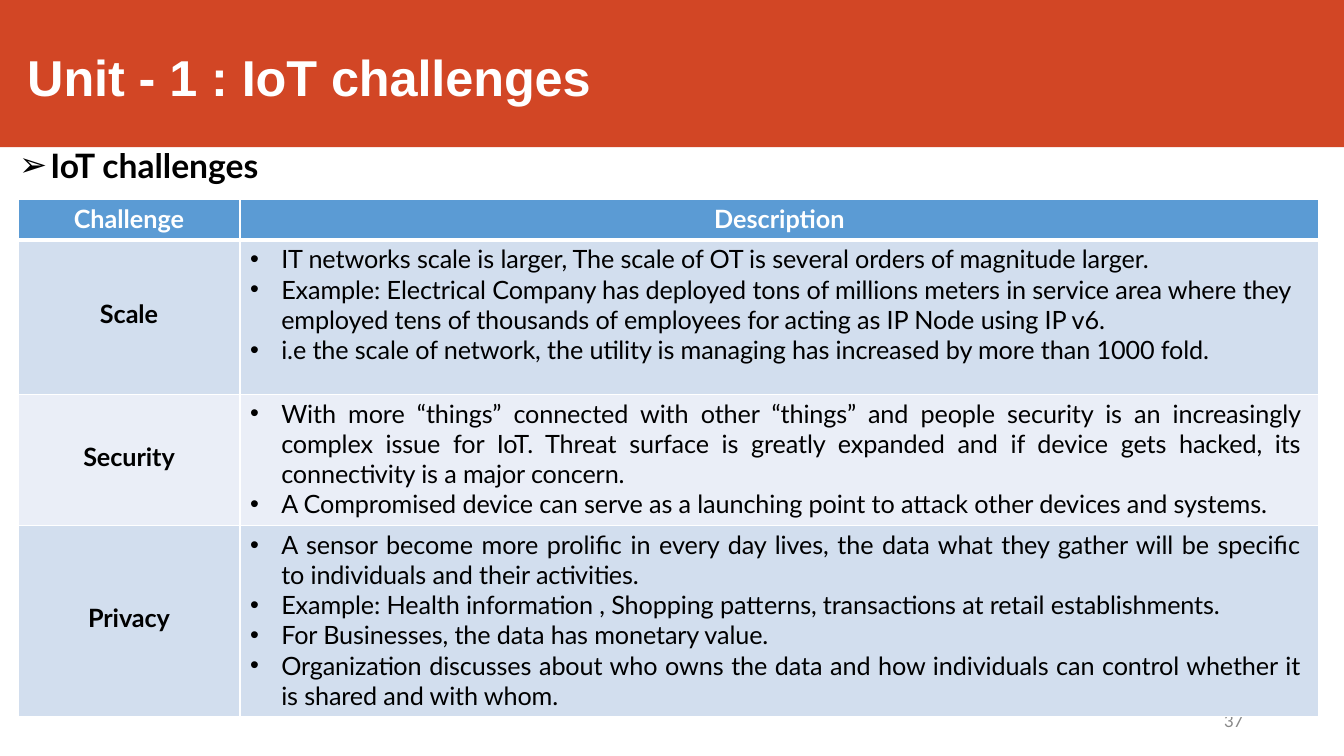
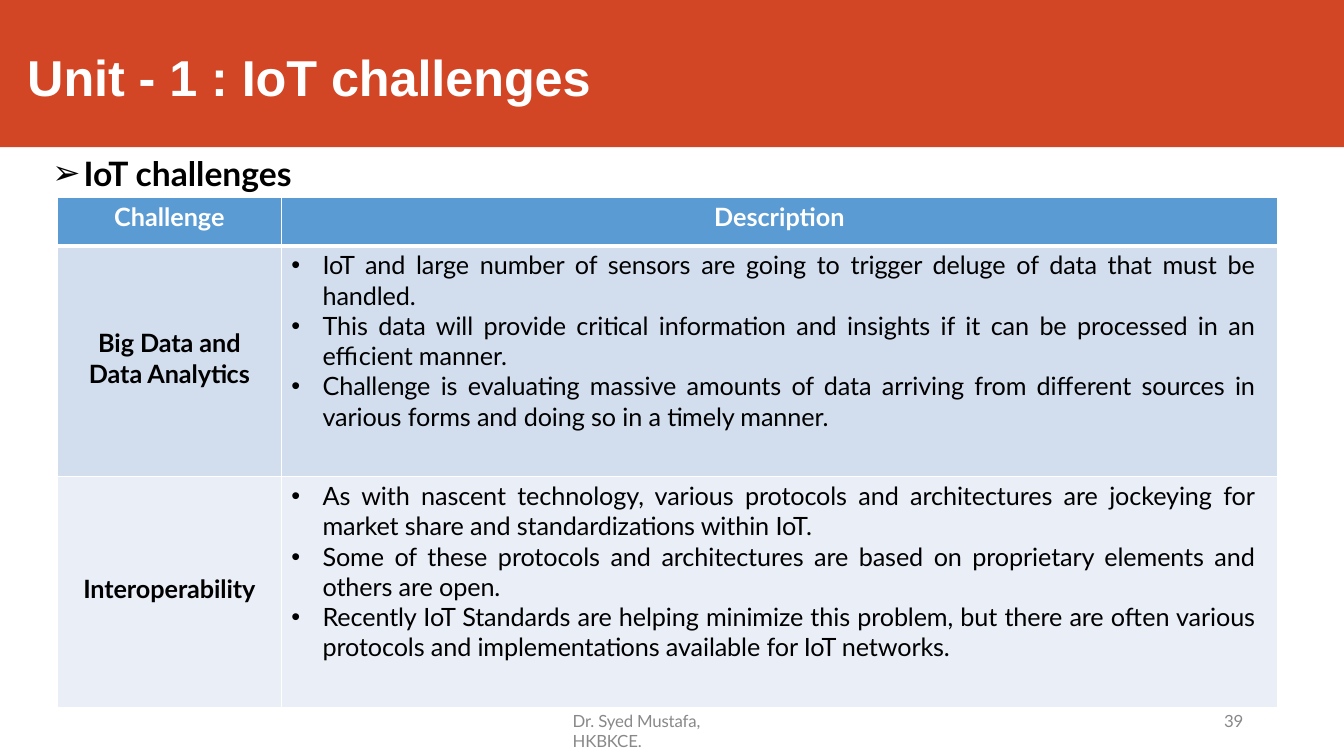
"""Build two slides that list IoT challenges in tables."""
from lxml import etree
from pptx import Presentation
from pptx.dml.color import RGBColor
from pptx.enum.shapes import MSO_SHAPE
from pptx.enum.text import MSO_ANCHOR, MSO_AUTO_SIZE, PP_ALIGN
from pptx.oxml.ns import qn
from pptx.util import Inches, Pt

LEFT, CENTER, JUSTIFY = PP_ALIGN.LEFT, PP_ALIGN.CENTER, PP_ALIGN.JUSTIFY
TOP, MIDDLE = MSO_ANCHOR.TOP, MSO_ANCHOR.MIDDLE
NO_FIT, RECTANGLE = MSO_AUTO_SIZE.NONE, MSO_SHAPE.RECTANGLE

WIDTH, HEIGHT, BAND_HEIGHT = 13.33, 7.5, 1.46
RED, BLUE, WHITE, BLACK, GRAY = "D24625", "5B9BD4", "FFFFFF", "000000", "888888"
ROW_FILLS = ("D2DEEE", "EAEEF7")
HEADING_FONT, BODY_FONT = "Arial", "Lato"
TITLE = "Unit - 1 : IoT challenges"
SUBTITLE = "IoT challenges"
HEADER = ("Challenge", "Description")

SLIDES = [
    {
        "number": "37", "footer": None, "subtitle_at": (0.17, 1.43),
        "table_at": (0.18, 1.98), "columns": (2.2, 10.7),
        "heights": (0.4, 1.53, 1.3, 1.9), "right_margin": 0.18,
        "rows": [
            ("Scale", LEFT, [
                "IT networks scale is larger, The scale of OT is several orders of magnitude larger.",
                "Example: Electrical Company has deployed tons of millions meters in service area "
                "where they\vemployed tens of thousands of employees for acting as IP Node using IP v6.",
                "i.e the scale of network, the utility is managing has increased by more than 1000 fold.",
            ]),
            ("Security", JUSTIFY, [
                "With more “things” connected with other “things” and people security is an "
                "increasingly complex issue for IoT. Threat surface is greatly expanded and if "
                "device gets hacked, its connectivity is a major concern.",
                "A Compromised device can serve as a launching point to attack other devices and systems.",
            ]),
            ("Privacy", JUSTIFY, [
                "A sensor become more prolific in every day lives, the data what they gather "
                "will be specific\vto individuals and their activities.",
                "Example: Health information , Shopping patterns, transactions at retail establishments.",
                "For Businesses, the data has monetary value.",
                "Organization discusses about who owns the data and how individuals can control "
                "whether it\vis shared and with whom.",
            ]),
        ],
    },
    {
        "number": "39", "footer": "Dr. Syed Mustafa, HKBKCE.", "subtitle_at": (0.5, 1.51),
        "table_at": (0.57, 1.96), "columns": (2.22, 9.88),
        "heights": (0.48, 2.29, 2.29), "right_margin": 0.22,
        "rows": [
            ("Big Data and\vData Analytics", JUSTIFY, [
                "IoT and large number of sensors are going to trigger deluge of data that must be\vhandled.",
                "This data will provide critical information and insights if it can be processed "
                "in an\vefficient manner.",
                "Challenge is evaluating massive amounts of data arriving from different sources "
                "in\vvarious forms and doing so in a timely manner.",
            ]),
            ("Interoperability", JUSTIFY, [
                "As with nascent technology, various protocols and architectures are jockeying "
                "for\vmarket share and standardizations within IoT.",
                "Some of these protocols and architectures are based on proprietary elements "
                "and\vothers are open.",
                "Recently IoT Standards are helping minimize this problem, but there are often "
                "various\vprotocols and implementations available for IoT networks.",
            ]),
        ],
    },
]


def color(value):
    """Turn a hex string into a colour."""
    return RGBColor.from_string(value)


def write(para, text, size, ink, bold=False, font=BODY_FONT, spacing=0, align=LEFT, before=0):
    """Fill a paragraph with runs, breaking lines at vertical tabs."""
    para.alignment = align
    para.space_before = Pt(before)
    for index, line in enumerate(text.split("\v")):
        if index:
            para.add_line_break()
        span = para.add_run()
        span.text = line
        span.font.size, span.font.bold, span.font.name = Pt(size), bold, font
        span.font.color.rgb = color(ink)
        if spacing:
            span.font._element.set("spc", str(spacing))


def add_bullet(para, mark, indent, hang=0.31):
    """Give a paragraph a bullet with a hanging indent."""
    settings = para._p.get_or_add_pPr()
    settings.set("marL", str(Inches(indent)))
    settings.set("indent", str(-Inches(hang)))
    etree.SubElement(settings, qn("a:buFont")).set("typeface", HEADING_FONT)
    etree.SubElement(settings, qn("a:buChar")).set("char", mark)


def prepare(frame, top):
    """Set the shared insets and wrapping of a text frame."""
    frame.word_wrap, frame.auto_size, frame.vertical_anchor = True, NO_FIT, TOP
    frame.margin_left = frame.margin_right = frame.margin_bottom = 0
    frame.margin_top = Inches(top)


def add_text(page, left, top, width, height, inset):
    """Add a text box and return its first paragraph."""
    box = page.shapes.add_textbox(*map(Inches, (left, top, width, height)))
    prepare(box.text_frame, inset)
    return box.text_frame.paragraphs[0]


def add_borders(cell, row):
    """Draw white borders, with a heavy rule under the header."""
    settings = cell._tc.get_or_add_tcPr()
    widths = {"L": 1, "R": 1, "T": 3 if row == 1 else 1, "B": 3 if row == 0 else 1}
    for index, (side, width) in enumerate(widths.items()):
        line = etree.Element(qn("a:ln" + side), w=str(Pt(width)))
        fill = etree.SubElement(line, qn("a:solidFill"))
        etree.SubElement(fill, qn("a:srgbClr")).set("val", WHITE)
        settings.insert(index, line)


def style_cell(cell, row, fill, anchor, margins):
    """Set the fill, borders, anchor and margins of a cell."""
    cell.fill.solid()
    cell.fill.fore_color.rgb = color(fill)
    cell.vertical_anchor = anchor
    cell.margin_left, cell.margin_top, cell.margin_right, cell.margin_bottom = map(Inches, margins)
    add_borders(cell, row)


def add_challenges(page, content):
    """Add the table of challenges."""
    columns, heights = content["columns"], content["heights"]
    sizes = (*content["table_at"], sum(columns), sum(heights))
    table = page.shapes.add_table(len(heights), len(columns), *map(Inches, sizes)).table
    for column, width in zip(table.columns, columns):
        column.width = Inches(width)
    for row, height in zip(table.rows, heights):
        row.height = Inches(height)
    for column, text in enumerate(HEADER):
        cell = table.cell(0, column)
        style_cell(cell, 0, BLUE, TOP, (0, 0.04, 0, 0))
        write(cell.text_frame.paragraphs[0], text, 18, WHITE, True, align=CENTER, before=3.1)
    for row, (label, align, points) in enumerate(content["rows"], 1):
        fill = ROW_FILLS[(row - 1) % 2]
        name, details = table.cell(row, 0), table.cell(row, 1)
        style_cell(name, row, fill, MIDDLE, (0, 0, 0, 0.06))
        write(name.text_frame.paragraphs[0], label, 18, BLACK, True, align=CENTER, spacing=-5)
        right = 0.05 if align == LEFT else content["right_margin"]
        style_cell(details, row, fill, TOP, (0, 0.04, right, 0))
        frame = details.text_frame
        for index, point in enumerate(points):
            para = frame.add_paragraph() if index else frame.paragraphs[0]
            write(para, point, 18, BLACK, spacing=-8, align=align, before=0 if index else 3.1)
            add_bullet(para, "•", 0.41)


def add_band(page, layout):
    """Place the red title band on the shared layout."""
    band = page.shapes.add_shape(RECTANGLE, 0, 0, Inches(WIDTH), Inches(BAND_HEIGHT))
    band.shadow.inherit = False
    band.fill.solid()
    band.fill.fore_color.rgb = color(RED)
    band.line.fill.background()
    layout.shapes._spTree.insert(2, band._element)


def build_page(page, content):
    """Fill one slide with its title, footers, subtitle and table."""
    title = page.shapes.title
    title.left, title.top, title.width, title.height = map(Inches, (0.27, 0.45, 6.42, 0.63))
    prepare(title.text_frame, 0.01)
    write(title.text_frame.paragraphs[0], TITLE, 36, WHITE, True, HEADING_FONT, -5, before=1)
    if content["footer"]:
        para = add_text(page, 5.68, 7.02, 1.9, 0.25, 0.03)
        write(para, content["footer"], 12, GRAY, spacing=-10, before=1.9)
    para = add_text(page, 12.1, 7.02, 0.26, 0.25, 0.03)
    write(para, content["number"], 12, GRAY, before=1.9)
    para._p.get_or_add_pPr().set("marL", str(Inches(0.04)))
    para = add_text(page, *content["subtitle_at"], 2.58, 0.43, 0.01)
    write(para, SUBTITLE, 24, BLACK, True, before=1)
    add_bullet(para, "➢", 0.33)
    add_challenges(page, content)


def main():
    """Create and save the deck."""
    deck = Presentation()
    deck.slide_width, deck.slide_height = Inches(WIDTH), Inches(HEIGHT)
    layout = deck.slide_layouts[5]
    for index, content in enumerate(SLIDES):
        page = deck.slides.add_slide(layout)
        if index == 0:
            add_band(page, layout)
        build_page(page, content)
    deck.save("out.pptx")


if __name__ == "__main__":
    main()
